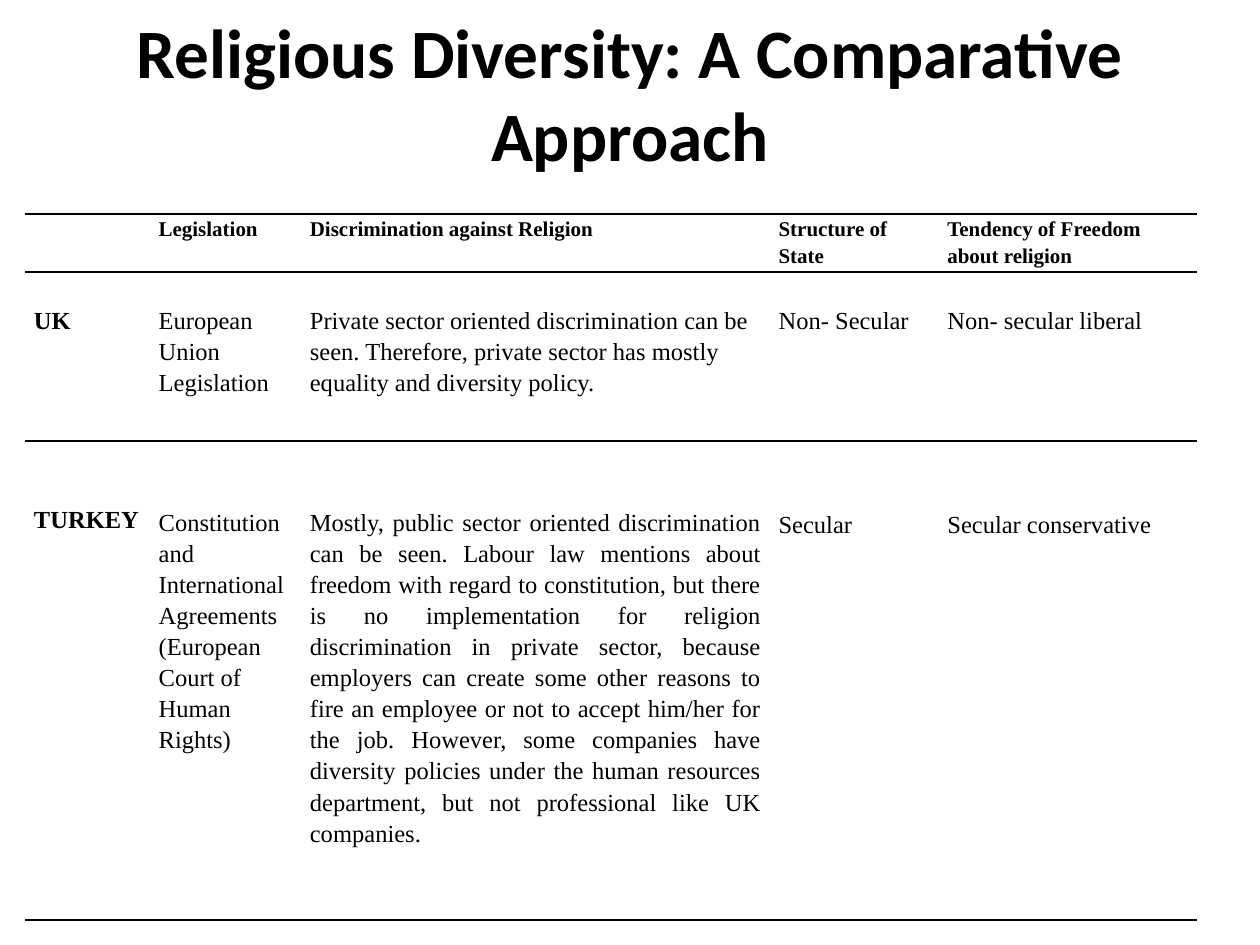
from lxml import etree
from pptx import Presentation
from pptx.dml.color import RGBColor
from pptx.enum import text
from pptx.oxml import ns
from pptx.util import Inches, Pt

BLACK = "000000"


def write(frame, words, align, spacing, **font):
    frame.word_wrap = True
    para = frame.paragraphs[0]
    para.alignment = align
    para.line_spacing = spacing
    span = para.add_run()
    span.text = words
    for name, value in font.items():
        setattr(span.font, name, value)
    span.font.color.rgb = RGBColor.from_string(BLACK)


def rule(cell, side):
    line = etree.SubElement(cell._tc.get_or_add_tcPr(), ns.qn(f"a:ln{side}"), w=str(Pt(1)))
    fill = etree.SubElement(line, ns.qn("a:solidFill"))
    etree.SubElement(fill, ns.qn("a:srgbClr"), val=BLACK)


deck = Presentation()
deck.slide_width, deck.slide_height = Inches(10), Inches(7.5)
page = deck.slides.add_slide(deck.slide_layouts[6])

title = page.shapes.add_textbox(Inches(0.5), Inches(0.44), Inches(9), Inches(1.25))
title.text_frame.vertical_anchor = text.MSO_ANCHOR.MIDDLE
title.text_frame.margin_bottom = Inches(0.71)
write(title.text_frame, "Religious Diversity: A Comparative Approach", text.PP_ALIGN.CENTER, 1.0,
      name="Calibri", size=Pt(39.6), bold=True)

widths = [0.99, 1.2, 3.72, 1.34, 2.05]
heights = [0.45, 1.34, 3.8]
rows = [
    ["", "Legislation", "Discrimination against Religion", "Structure of State",
     "Tendency of Freedom about religion"],
    ["UK", "European Union Legislation",
     "Private sector oriented discrimination can be seen. Therefore, private sector has mostly "
     "equality and diversity policy.",
     "Non- Secular", "Non- secular liberal"],
    ["TURKEY",
     "Constitution and International Agreements (European Court of Human Rights)",
     "Mostly, public sector oriented discrimination can be seen. Labour law mentions about freedom "
     "with regard to constitution, but there is no implementation for religion discrimination in "
     "private sector, because employers can create some other reasons to fire an employee or not to "
     "accept him/her for the job. However, some companies have diversity policies under the human "
     "resources department, but not professional like UK companies.",
     "Secular", "Secular conservative"],
]
top_margins = [[0] * 5, [0.25] * 5, [0.49, 0.51, 0.51, 0.53, 0.53]]
row_rules = ["TB", "T", "B"]

frame = page.shapes.add_table(len(rows), len(widths), Inches(0.2), Inches(1.7),
                              Inches(sum(widths)), Inches(sum(heights)))
table = frame.table
table.first_row = table.horz_banding = False
no_grid = "{2D5ABB26-0587-4C30-8999-92F81FD0307C}"
table._tbl.tblPr.find(ns.qn("a:tableStyleId")).text = no_grid
for column, width in zip(table.columns, widths):
    column.width = Inches(width)

for r, words_in_row in enumerate(rows):
    table.rows[r].height = Inches(heights[r])
    for c, words in enumerate(words_in_row):
        cell = table.cell(r, c)
        margins = {"left": 0.07, "right": 0.07, "top": top_margins[r][c], "bottom": 0}
        for side, value in margins.items():
            setattr(cell, f"margin_{side}", Inches(value))
        for side in row_rules[r]:
            rule(cell, side)
        cell.fill.background()
        if words:
            justified = (r, c) == (2, 2)
            align = text.PP_ALIGN.JUSTIFY if justified else text.PP_ALIGN.LEFT
            write(cell.text_frame, words, align, 1.15, name="Times New Roman",
                  size=Pt(14 if r else 12), bold=r == 0 or c == 0)

deck.save("out.pptx")
